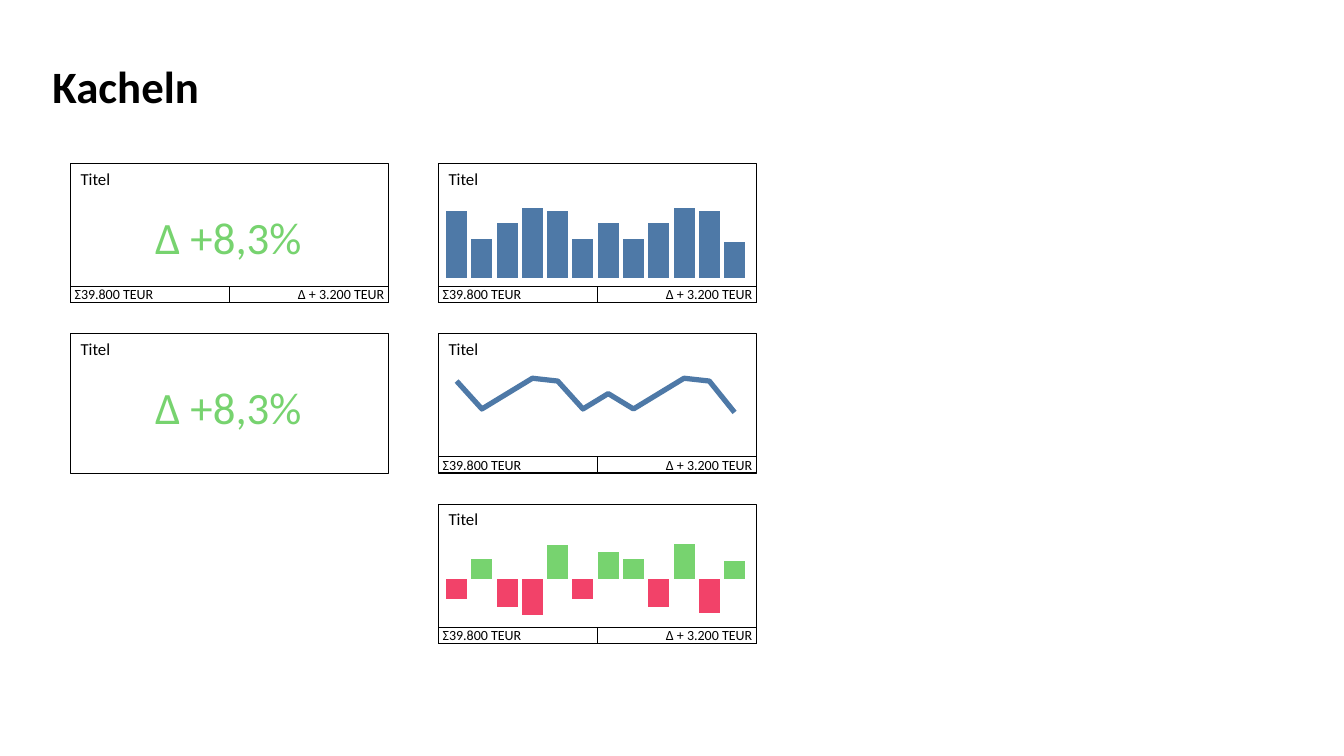
"""Build the "Kacheln" slide: KPI tiles with figures and mini charts."""
from dataclasses import dataclass
from typing import Optional

from lxml import etree
from pptx import Presentation
from pptx.chart.chart import Chart
from pptx.chart.data import CategoryChartData
from pptx.dml.color import RGBColor
from pptx.enum.chart import XL_CHART_TYPE
from pptx.enum.shapes import MSO_SHAPE
from pptx.enum.text import MSO_ANCHOR, MSO_AUTO_SIZE, PP_ALIGN
from pptx.oxml.ns import qn
from pptx.shapes.group import GroupShape
from pptx.shapes.shapetree import GroupShapes
from pptx.slide import Slide
from pptx.util import Inches, Pt

RECT = MSO_SHAPE.RECTANGLE
COLUMN, LINE = XL_CHART_TYPE.COLUMN_CLUSTERED, XL_CHART_TYPE.LINE
LEFT, RIGHT = PP_ALIGN.LEFT, PP_ALIGN.RIGHT
TOP, MIDDLE = MSO_ANCHOR.TOP, MSO_ANCHOR.MIDDLE
NO_FIT, FIT_SHAPE = MSO_AUTO_SIZE.NONE, MSO_AUTO_SIZE.SHAPE_TO_FIT_TEXT


@dataclass(frozen=True)
class Theme:
    font: str = "Calibri"
    black: RGBColor = RGBColor(0x00, 0x00, 0x00)
    blue: RGBColor = RGBColor(0x4E, 0x79, 0xA7)
    green: RGBColor = RGBColor(0x77, 0xD3, 0x6F)
    red: RGBColor = RGBColor(0xF2, 0x42, 0x69)
    big: int = 32
    label: int = 12
    small: int = 10
    border: float = 0.25
    curve: float = 3.75


@dataclass(frozen=True)
class ChartSpec:
    kind: XL_CHART_TYPE
    values: tuple[int, ...]
    low: int
    high: int
    color: RGBColor


@dataclass(frozen=True)
class Tile:
    col: int
    row: int
    footer: bool = True
    chart: Optional[ChartSpec] = None


THEME = Theme()
TILE_W, TILE_H = 3.15, 1.38
GRID_X, GRID_Y = 0.7, 1.62
STEP_X, STEP_Y = 3.65, 1.69
FOOTER_Y, FOOTER_H = 1.22, 0.16
CHART_Y, CHART_H = 0.29, 0.93
PLOT = {"x": 0.017, "y": 0.076, "w": 0.955, "h": 0.834}

AMOUNTS = (96, 56, 78, 100, 96, 56, 78, 56, 78, 100, 96, 51)
CHANGES = (-56, 56, -78, -100, 96, -56, 78, 56, -78, 100, -96, 51)
TILES = (
    Tile(0, 0),
    Tile(0, 1, footer=False),
    Tile(1, 0, chart=ChartSpec(COLUMN, AMOUNTS, 0, 112, THEME.blue)),
    Tile(1, 1, chart=ChartSpec(LINE, AMOUNTS, 0, 112, THEME.blue)),
    Tile(1, 2, chart=ChartSpec(COLUMN, CHANGES, -110, 110, THEME.green)),
)


def style_font(font, size: int, color: RGBColor, bold: bool = False) -> None:
    font.name, font.size, font.bold = THEME.font, Pt(size), bold
    font.color.rgb = color


def add_frame(shapes: GroupShapes, x: float, y: float, w: float, h: float,
              text: str, size: int, align: PP_ALIGN = LEFT,
              anchor: MSO_ANCHOR = TOP, inset: tuple[float, float] = (0.1, 0.05)) -> None:
    sp = shapes.add_shape(RECT, Inches(x), Inches(y), Inches(w), Inches(h))
    sp.shadow.inherit = False
    sp.fill.background()
    sp.line.color.rgb = THEME.black
    sp.line.width = Pt(THEME.border)
    tf = sp.text_frame
    tf.word_wrap = True
    tf.vertical_anchor = anchor
    tf.margin_left = tf.margin_right = Inches(inset[0])
    tf.margin_top = tf.margin_bottom = Inches(inset[1])
    p = tf.paragraphs[0]
    p.text, p.alignment = text, align
    style_font(p.font, size, THEME.black)


def add_figure(shapes: GroupShapes, x: float, y: float) -> None:
    tb = shapes.add_textbox(Inches(x + 0.74), Inches(y + 0.41), Inches(1.67), Inches(0.64))
    tf = tb.text_frame
    tf.word_wrap = False
    tf.auto_size = FIT_SHAPE
    p = tf.paragraphs[0]
    p.text = "Δ +8,3%"
    style_font(p.font, THEME.big, THEME.green)


def set_plot_layout(chart: Chart) -> None:
    area = chart.element.find(".//" + qn("c:plotArea"))
    old = area.find(qn("c:layout"))
    if old is not None:
        area.remove(old)
    layout = etree.Element(qn("c:layout"))
    area.insert(0, layout)
    manual = etree.SubElement(layout, qn("c:manualLayout"))
    modes = {"layoutTarget": "inner", "xMode": "edge", "yMode": "edge"}
    for tag, val in {**modes, **PLOT}.items():
        etree.SubElement(manual, qn(f"c:{tag}")).set("val", str(val))
    axis = area.find(qn("c:valAx"))
    if axis.find(qn("c:crossBetween")) is None:
        between = etree.Element(qn("c:crossBetween"))
        between.set("val", "between")
        axis.find(qn("c:crosses")).addnext(between)


def add_mini_chart(shapes: GroupShapes, x: float, y: float, spec: ChartSpec) -> None:
    data = CategoryChartData()
    data.categories = [str(n + 1) for n in range(len(spec.values))]
    data.add_series("Series 1", spec.values)
    chart = shapes.add_chart(spec.kind, Inches(x), Inches(y + CHART_Y),
                             Inches(TILE_W), Inches(CHART_H), data).chart
    chart.has_title = chart.has_legend = False
    style_font(chart.font, THEME.small, THEME.black)
    axis = chart.value_axis
    axis.minimum_scale, axis.maximum_scale = spec.low, spec.high
    axis.has_major_gridlines = False
    axis.visible = chart.category_axis.visible = False
    plot = chart.plots[0]
    plot.vary_by_categories = False
    series = plot.series[0]
    if spec.kind == LINE:
        series.smooth = False
        series.format.line.color.rgb = spec.color
        series.format.line.width = Pt(THEME.curve)
    else:
        plot.gap_width, plot.overlap = 20, -27
        series.invert_if_negative = False
        series.format.fill.solid()
        series.format.fill.fore_color.rgb = spec.color
        for i, value in enumerate(spec.values):
            if value < 0:
                fill = series.points[i].format.fill
                fill.solid()
                fill.fore_color.rgb = THEME.red
    set_plot_layout(chart)


def add_tile(s: Slide, tile: Tile) -> None:
    x, y = GRID_X + tile.col * STEP_X, GRID_Y + tile.row * STEP_Y
    group: GroupShape = s.shapes.add_group_shape()
    shapes = group.shapes
    add_frame(shapes, x, y, TILE_W, TILE_H, "Titel", THEME.label)
    if tile.footer:
        half = TILE_W / 2
        cells = (("Σ39.800 TEUR", LEFT), ("Δ + 3.200 TEUR", RIGHT))
        for i, (text, align) in enumerate(cells):
            add_frame(shapes, x + i * half, y + FOOTER_Y, half, FOOTER_H,
                      text, THEME.small, align, MIDDLE, (0.04, 0))
    if tile.chart:
        add_mini_chart(shapes, x, y, tile.chart)
    else:
        add_figure(shapes, x, y)


def add_title(s: Slide) -> None:
    title = s.shapes.title
    title.left, title.top = Inches(0.42), Inches(0.56)
    title.width, title.height = Inches(12.49), Inches(0.64)
    tf = title.text_frame
    tf.auto_size = NO_FIT
    tf.vertical_anchor = MIDDLE
    p = tf.paragraphs[0]
    p.text, p.alignment, p.line_spacing = "Kacheln", LEFT, 0.9
    style_font(p.font, THEME.big, THEME.black, bold=True)


def main() -> None:
    prs = Presentation()
    prs.slide_width, prs.slide_height = Inches(13.33), Inches(7.5)
    s = prs.slides.add_slide(prs.slide_layouts[5])
    add_title(s)
    for tile in TILES:
        add_tile(s, tile)
    prs.save("out.pptx")


if __name__ == "__main__":
    main()
